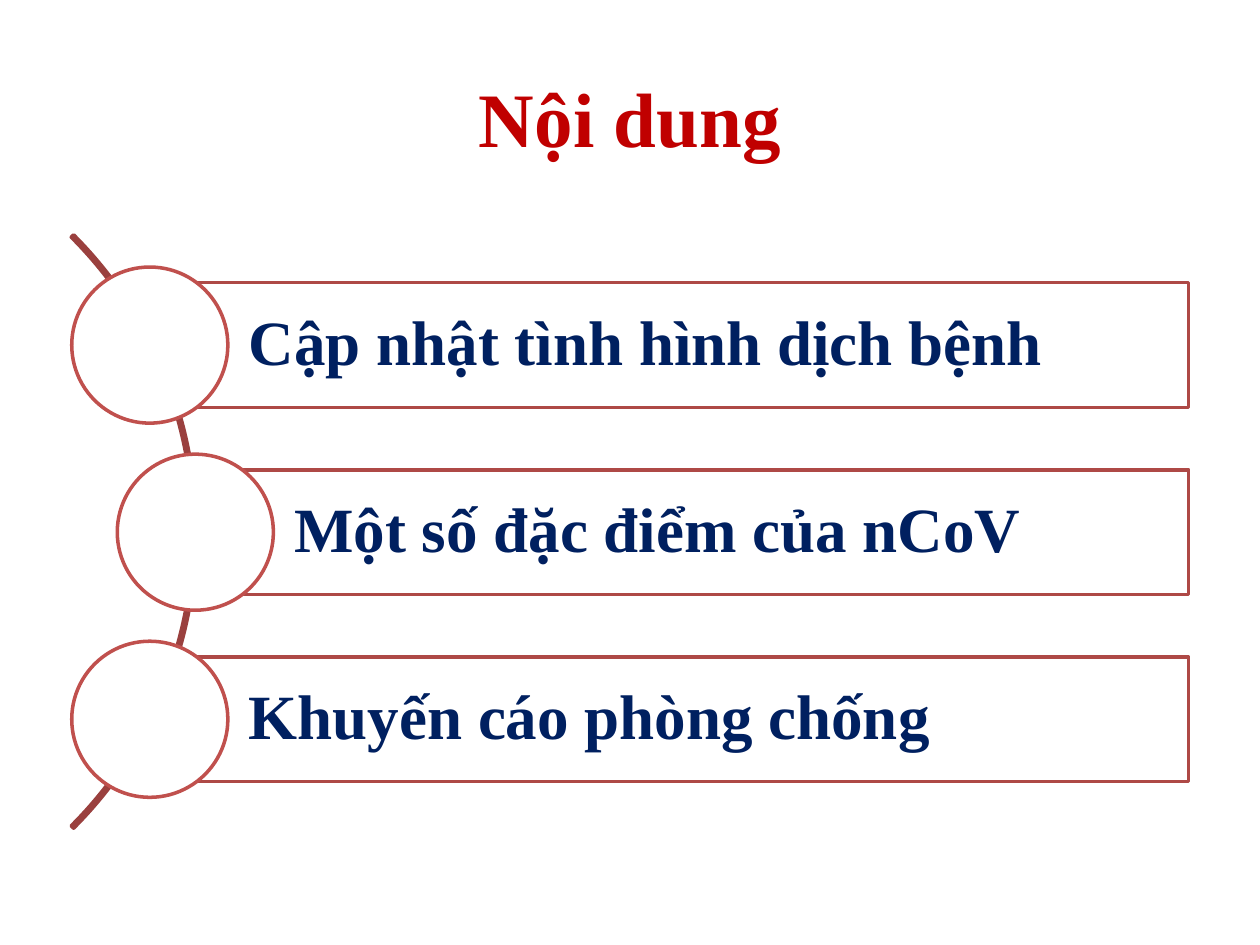
"""Build a contents slide with three topics strung along an arc."""
import pptx
import pptx.util
import pptx.dml.color
import pptx.enum.shapes
import pptx.enum.text

Pt = pptx.util.Pt
Kind = pptx.enum.shapes.MSO_SHAPE
Align = pptx.enum.text.PP_ALIGN
Anchor = pptx.enum.text.MSO_ANCHOR


def tint(code):
    return pptx.dml.color.RGBColor.from_string(code)


def write(frame, text, size, color, align):
    frame.word_wrap = True
    frame.vertical_anchor = Anchor.MIDDLE
    para = frame.paragraphs[0]
    para.alignment = align
    run = para.add_run()
    run.text = text
    run.font.name = "Times New Roman"
    run.font.size = Pt(size)
    run.font.bold = True
    run.font.color.rgb = tint(color)
    return para


deck = pptx.Presentation()
deck.slide_width, deck.slide_height = Pt(720), Pt(540)
slide = deck.slides.add_slide(deck.slide_layouts[6])
shapes = slide.shapes

title = shapes.add_textbox(Pt(36), Pt(21.6), Pt(648), Pt(90))
write(title.text_frame, "Nội dung", 44, "C00000", Align.CENTER)

arc = shapes.add_shape(Kind.BLOCK_ARC, Pt(-367.2), Pt(64), Pt(479.5), Pt(479.5))
arc.adjustments[0] = 189
arc.adjustments[1] = 27
arc.adjustments[2] = 0.004
arc.shadow.inherit = False
arc.fill.background()
arc.line.color.rgb = tint("9A403E")
arc.line.width = Pt(2)

right, height, size = 679.2, 71.3, 89.2
first, step = 197.2, 106.9
topics = [
    (85.6, "Cập nhật tình hình dịch bệnh"),
    (111.6, "Một số đặc điểm của nCoV"),
    (85.6, "Khuyến cáo phòng chống"),
]
for row, (left, text) in enumerate(topics):
    mid = first + row * step
    bar = shapes.add_shape(
        Kind.RECTANGLE, Pt(left), Pt(mid - height / 2), Pt(right - left), Pt(height)
    )
    disc = shapes.add_shape(
        Kind.OVAL, Pt(left - size / 2), Pt(mid - size / 2), Pt(size), Pt(size)
    )
    for shape, color in ((bar, "AE4946"), (disc, "C0504D")):
        shape.shadow.inherit = False
        shape.fill.solid()
        shape.fill.fore_color.rgb = tint("FFFFFF")
        shape.line.color.rgb = tint(color)
        shape.line.width = Pt(2)
    frame = bar.text_frame
    frame.margin_left = Pt(56.6)
    frame.margin_top = frame.margin_right = frame.margin_bottom = Pt(7.2)
    para = write(frame, text, 36, "002060", Align.LEFT)
    para.line_spacing = 0.9

deck.save("out.pptx")
